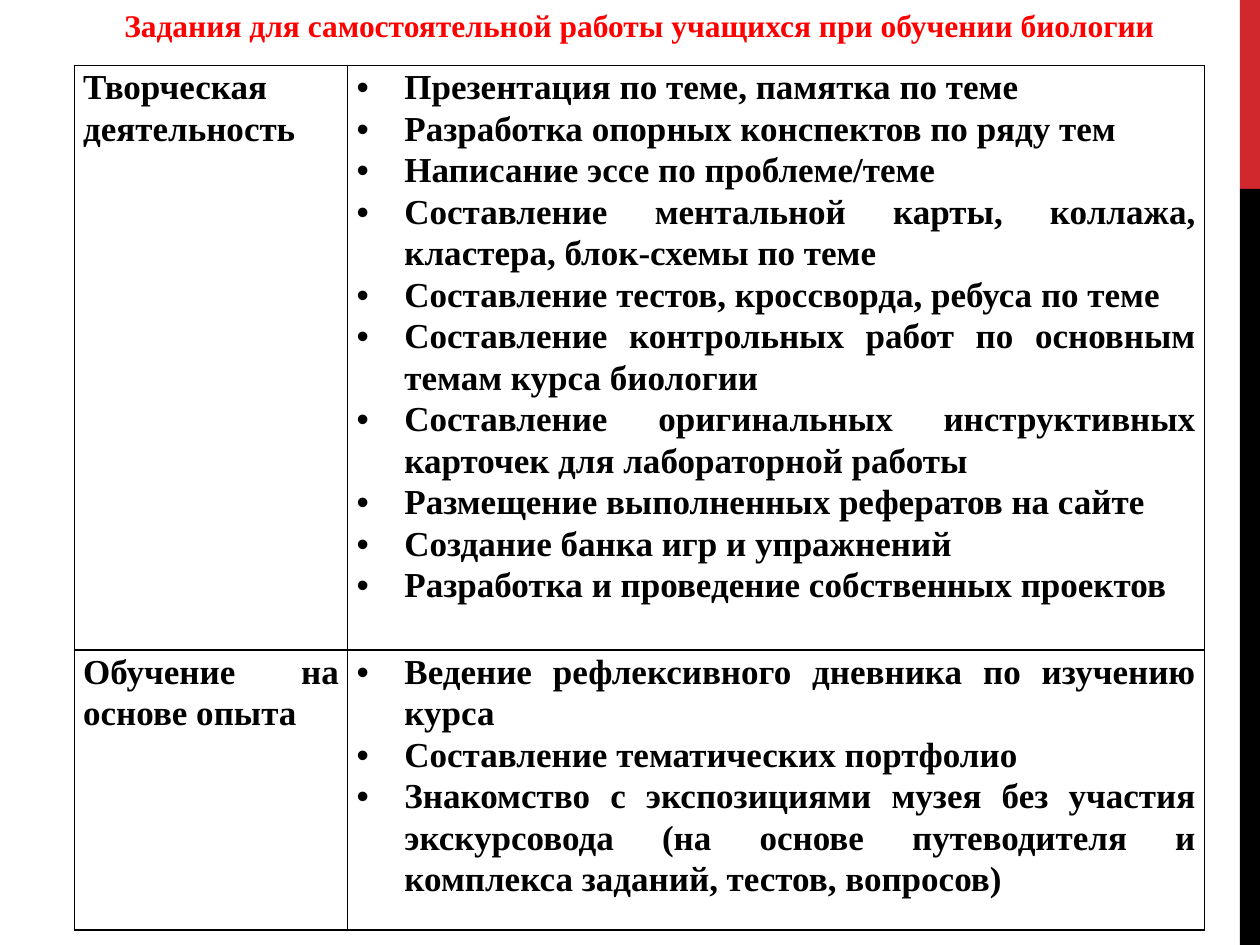
import pptx
import pptx.util
import pptx.dml.color
import pptx.enum.shapes
import pptx.enum.text
import pptx.oxml
from pptx.oxml.ns import nsdecls
from pptx.util import Inches

ALIGN = pptx.enum.text.PP_ALIGN


def color(hex_code):
    return pptx.dml.color.RGBColor.from_string(hex_code)


class SlideBuilder:
    font = "Times New Roman"
    ink = "000000"
    accent = "D1282E"
    title_color = "FF0000"
    body_size = 20
    title_size = 18
    line_spacing = 1.07
    hanging = Inches(0.38)

    def __init__(self, slide):
        self.s = slide

    def bar(self, x, y, w, h, fill):
        sp = self.s.shapes.add_shape(
            pptx.enum.shapes.MSO_SHAPE.RECTANGLE,
            Inches(x), Inches(y), Inches(w), Inches(h))
        sp.shadow.inherit = False
        sp.fill.solid()
        sp.fill.fore_color.rgb = color(fill)
        sp.line.fill.background()

    def style(self, p, size, fill, align):
        p.alignment = align
        p.font.name = self.font
        p.font.size = pptx.util.Pt(size)
        p.font.bold = True
        p.font.color.rgb = color(fill)

    def title(self, text, x, y, w, h):
        sp = self.s.shapes.add_textbox(Inches(x), Inches(y), Inches(w), Inches(h))
        tf = sp.text_frame
        tf.word_wrap = True
        tf.text = text
        self.style(tf.paragraphs[0], self.title_size, self.title_color, ALIGN.CENTER)

    def bullet(self, p):
        pPr = p._p.get_or_add_pPr()
        pPr.set("marL", str(self.hanging))
        pPr.set("indent", str(-self.hanging))
        for xml in ('<a:buFont %s typeface="Arial"/>', '<a:buChar %s char="•"/>'):
            pPr.insert_element_before(
                pptx.oxml.parse_xml(xml % nsdecls("a")),
                "a:tabLst", "a:defRPr", "a:extLst")

    def borders(self, cell):
        tcPr = cell._tc.get_or_add_tcPr()
        for i, side in enumerate(("lnL", "lnR", "lnT", "lnB")):
            tcPr.insert(i, pptx.oxml.parse_xml(
                f'<a:{side} {nsdecls("a")} w="{pptx.util.Pt(1)}"><a:solidFill>'
                f'<a:srgbClr val="{self.ink}"/></a:solidFill></a:{side}>'))

    def cell(self, cell, lines, bulleted):
        cell.fill.background()
        self.borders(cell)
        cell.margin_left = cell.margin_right = Inches(0.07)
        cell.margin_top = cell.margin_bottom = 0
        tf = cell.text_frame
        tf.text = "\n".join(lines)
        for p in tf.paragraphs:
            self.style(p, self.body_size, self.ink, ALIGN.JUSTIFY)
            p.line_spacing = self.line_spacing
            if bulleted:
                self.bullet(p)

    def table(self, rows, x, y, widths, heights):
        table = self.s.shapes.add_table(
            len(rows), len(widths), Inches(x), Inches(y),
            Inches(sum(widths)), Inches(sum(heights))).table
        table.first_row = table.horz_banding = False
        for col, w in zip(table.columns, widths):
            col.width = Inches(w)
        for i, (heading, tasks) in enumerate(rows):
            table.rows[i].height = Inches(heights[i])
            self.cell(table.cell(i, 0), [heading], False)
            self.cell(table.cell(i, 1), tasks, True)


TASKS = [
    ("Творческая деятельность", [
        "Презентация по теме, памятка по теме",
        "Разработка опорных конспектов по ряду тем",
        "Написание эссе по проблеме/теме",
        "Составление ментальной карты, коллажа, кластера, блок-схемы по теме",
        "Составление тестов, кроссворда, ребуса по теме",
        "Составление контрольных работ по основным темам курса биологии",
        "Составление оригинальных инструктивных карточек для лабораторной работы",
        "Размещение выполненных рефератов на сайте",
        "Создание банка игр и упражнений",
        "Разработка и проведение собственных проектов",
    ]),
    ("Обучение на основе опыта", [
        "Ведение рефлексивного дневника по изучению курса",
        "Составление тематических портфолио",
        "Знакомство с экспозициями музея без участия экскурсовода "
        "(на основе путеводителя и комплекса заданий, тестов, вопросов)",
    ]),
]


def main():
    prs = pptx.Presentation()
    prs.slide_width, prs.slide_height = Inches(10), Inches(7.5)
    b = SlideBuilder(prs.slides.add_slide(prs.slide_layouts[6]))

    # Side stripe
    b.bar(9.84, 0, 0.16, 1.5, b.accent)
    b.bar(9.84, 1.5, 0.16, 6, b.ink)

    # Table of tasks
    b.table(TASKS, 0.59, 0.52, [2.17, 6.8], [4.64, 2.22])

    # Title
    b.title("Задания для самостоятельной работы учащихся при обучении биологии",
            0.43, 0, 9.29, 0.4)

    prs.save("out.pptx")


if __name__ == "__main__":
    main()
